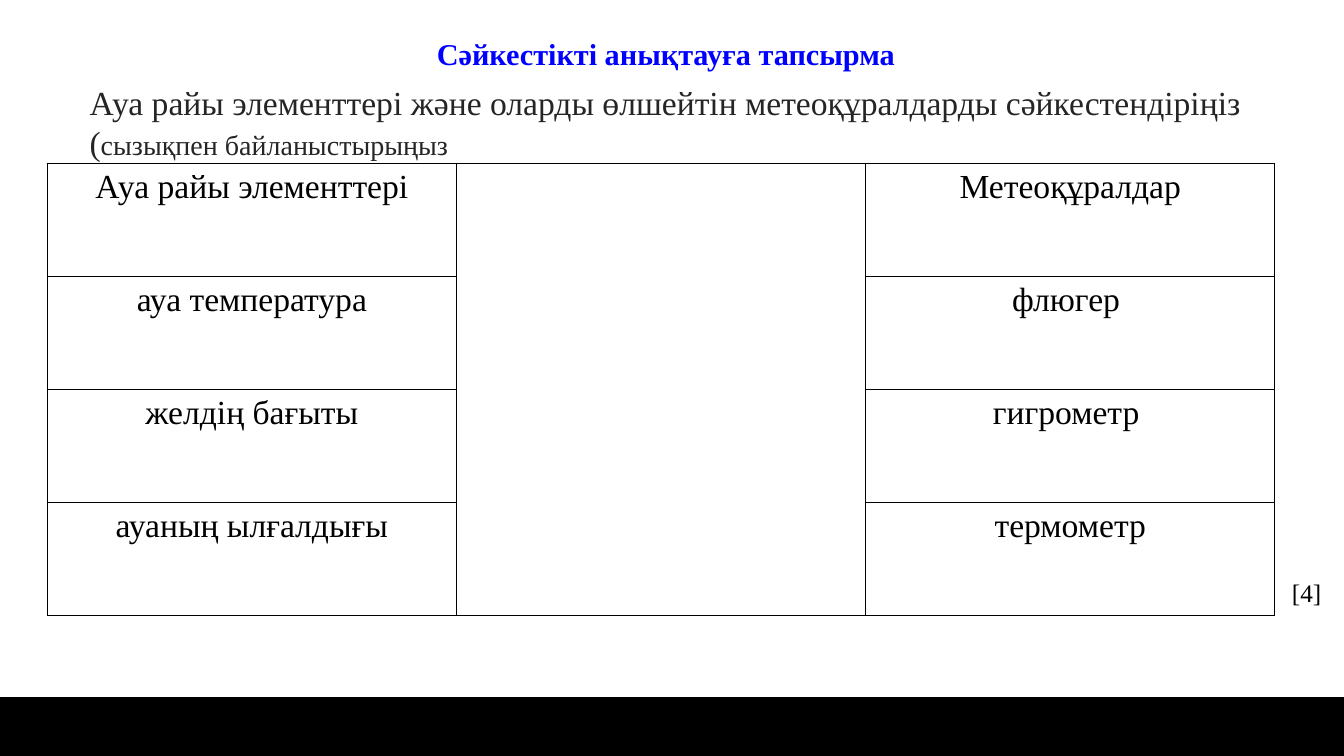
from dataclasses import dataclass

from lxml import etree
from pptx import Presentation
from pptx.dml.color import RGBColor
from pptx.enum.shapes import MSO_SHAPE
from pptx.enum.text import MSO_ANCHOR, MSO_AUTO_SIZE, PP_ALIGN
from pptx.oxml.ns import qn
from pptx.util import Pt

CENTER = PP_ALIGN.CENTER
MIDDLE = MSO_ANCHOR.MIDDLE
NO_AUTOFIT = MSO_AUTO_SIZE.NONE
FIT_SHAPE = MSO_AUTO_SIZE.SHAPE_TO_FIT_TEXT
RECTANGLE = MSO_SHAPE.RECTANGLE


@dataclass(frozen=True)
class Theme:
    font: str = "Times New Roman"
    black: str = "000000"
    blue: str = "0000FF"
    dark: str = "252525"
    title_size: float = 21.6
    text_size: float = 24
    note_size: float = 20
    score_size: float = 18


theme = Theme()


def add_span(para, text, size, color, bold=False):
    span = para.add_run()
    span.text = text
    span.font.name = theme.font
    span.font.size = Pt(size)
    span.font.bold = bold
    span.font.color.rgb = RGBColor.from_string(color)


def add_borders(cell):
    properties = cell._tc.get_or_add_tcPr()
    for position, side in enumerate(("a:lnL", "a:lnR", "a:lnT", "a:lnB")):
        line = etree.Element(qn(side), w=str(Pt(1)))
        fill = etree.SubElement(line, qn("a:solidFill"))
        etree.SubElement(fill, qn("a:srgbClr"), val=theme.black)
        properties.insert(position, line)


deck = Presentation()
deck.slide_width, deck.slide_height = Pt(960), Pt(540)
page = deck.slides.add_slide(deck.slide_layouts[5])

footer_band = page.shapes.add_shape(RECTANGLE, Pt(0), Pt(498), Pt(960), Pt(42))
footer_band.shadow.inherit = False
footer_band.fill.solid()
footer_band.fill.fore_color.rgb = RGBColor.from_string(theme.black)
footer_band.line.fill.background()

title = page.shapes.title
title.left, title.top, title.width, title.height = Pt(48), Pt(21.6), Pt(855.4), Pt(33.1)
title.text_frame.auto_size = NO_AUTOFIT
title.text_frame.vertical_anchor = MIDDLE
para = title.text_frame.paragraphs[0]
para.alignment = CENTER
add_span(para, "Сәйкестікті анықтауға тапсырма", theme.title_size, theme.blue, bold=True)

task_box = page.shapes.add_textbox(Pt(56.9), Pt(54.7), Pt(864), Pt(427.7))
task_box.text_frame.word_wrap = True
para = task_box.text_frame.paragraphs[0]
para.line_spacing = 1.0
add_span(para, "Ауа райы элементтері және оларды өлшейтін метеоқұралдарды сәйкестендіріңіз (",
         theme.text_size, theme.dark)
add_span(para, "сызықпен байланыстырыңыз", theme.note_size, theme.dark)

matches = [
    ("Ауа райы элементтері", "", "Метеоқұралдар"),
    ("ауа температура", "", "флюгер "),
    ("желдің бағыты", "", "гигрометр "),
    ("ауаның ылғалдығы", "", "термометр"),
]
table = page.shapes.add_table(4, 3, Pt(33.8), Pt(116.6), Pt(876.9), Pt(323.2)).table
table.first_row = False
table.horz_banding = False
for column in table.columns:
    column.width = Pt(292.3)
for row, texts in zip(table.rows, matches):
    row.height = Pt(80.8)
    for cell, text in zip(row.cells, texts):
        cell.fill.background()
        cell.margin_left = cell.margin_right = Pt(9.4)
        add_borders(cell)
        if text:
            para = cell.text_frame.paragraphs[0]
            para.alignment = CENTER
            add_span(para, text, theme.text_size, theme.black)
table.cell(0, 1).merge(table.cell(3, 1))

score_box = page.shapes.add_textbox(Pt(915.8), Pt(409), Pt(36), Pt(28.8))
score_box.text_frame.word_wrap = False
score_box.text_frame.auto_size = FIT_SHAPE
add_span(score_box.text_frame.paragraphs[0], "[4]", theme.score_size, theme.black)

deck.save("out.pptx")
